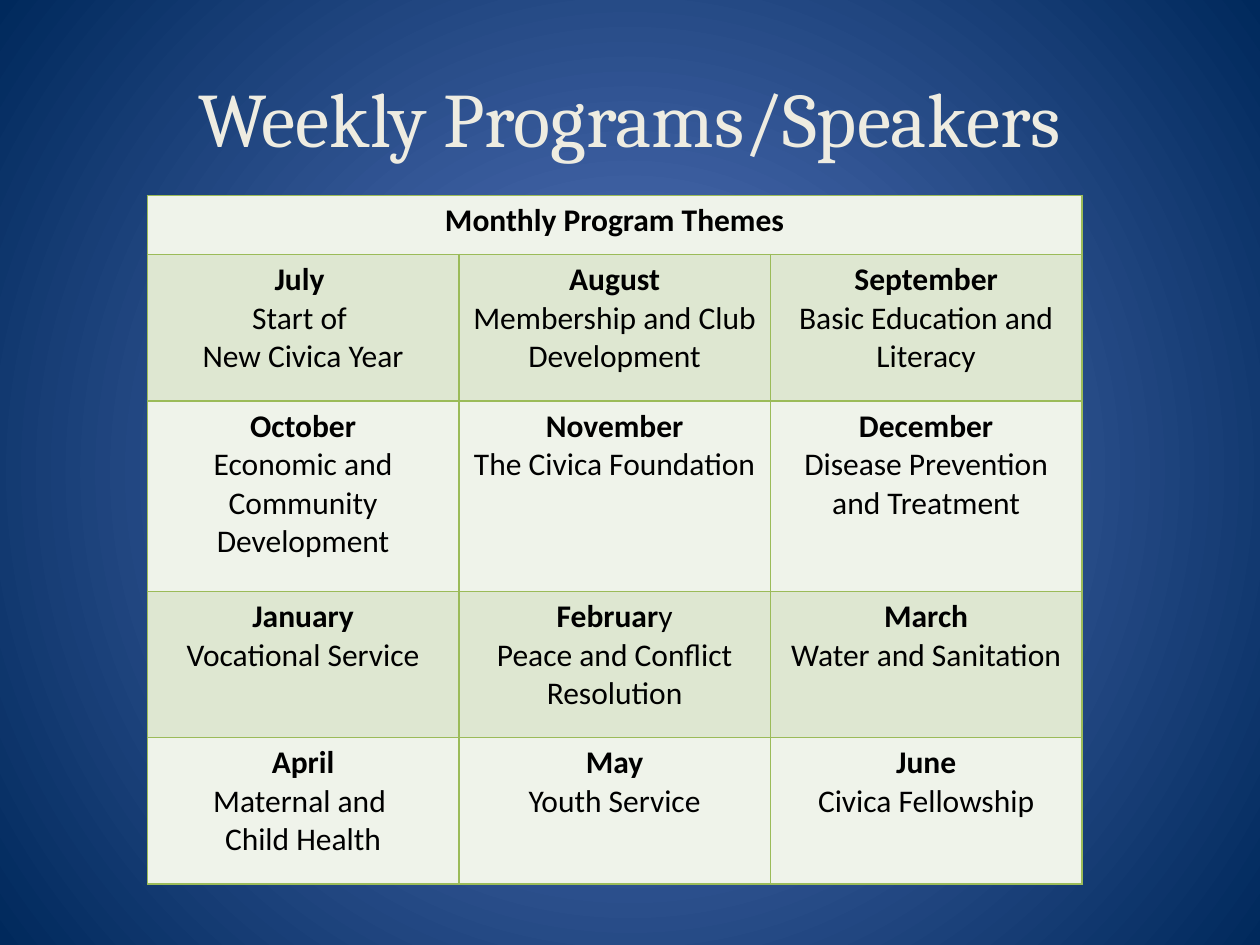
from dataclasses import dataclass

from lxml.etree import SubElement
from pptx import Presentation
from pptx.dml.color import RGBColor as RGB
from pptx.enum.text import MSO_ANCHOR as Anchor, PP_ALIGN as Align
from pptx.oxml.ns import qn
from pptx.util import Cm, Pt


@dataclass(frozen=True)
class Theme:
    glow: str = "5E7CC5"
    edge: str = "00295C"
    title: str = "EEECE1"
    ink: str = "000000"
    rule: str = "9BBB59"
    bands: tuple = ("EFF3EA", "DEE7D1")
    serif: str = "Cambria"
    sans: str = "Calibri"
    big: int = 44
    small: int = 18


@dataclass(frozen=True)
class Month:
    name: str
    lines: tuple
    tail: str = ""  # closing letters of the name in regular weight


THEME = Theme()
HEAD = Month("Monthly Program Themes", ())
YEAR = [
    Month("July ", ("Start of ", "New Civica Year")),
    Month("August", ("Membership and Club Development",)),
    Month("September", ("Basic Education and Literacy",)),
    Month("October", ("Economic and Community Development",)),
    Month("November", ("The Civica Foundation",)),
    Month("December", ("Disease Prevention and Treatment",)),
    Month("January", ("Vocational Service",)),
    Month("Februar", ("Peace and Conflict Resolution",), "y"),
    Month("March", ("Water and Sanitation",)),
    Month("April", ("Maternal and ", "Child Health")),
    Month("May", ("Youth Service",)),
    Month("June", ("Civica Fellowship",)),
]
COLS = 3
WIDTH = 6.28
ROWS = (1.19, 2.95, 3.84, 2.95, 2.95)


def style(run, face: str, size: int, color: str, bold: bool = False) -> None:
    font = run.font
    font.name, font.size, font.bold = face, Pt(size), bold
    font.color.rgb = RGB.from_string(color)


def paint(slide) -> None:
    """Fill the background with a round glow."""
    fill = slide.background.fill
    fill.gradient()
    for stop, color, at in zip(fill.gradient_stops, (THEME.glow, THEME.edge), (0, 1)):
        stop.color.rgb = RGB.from_string(color)
        stop.position = at
    grad = next(slide.element.iter(qn("a:gradFill")))
    grad.remove(grad.find(qn("a:lin")))
    path = SubElement(grad, qn("a:path"), {"path": "circle"})
    SubElement(path, qn("a:fillToRect"), {side: "50000" for side in "ltrb"})


def border(cell) -> None:
    """Rule all four sides; the lines come before the fill."""
    props = cell._tc.get_or_add_tcPr()
    for spot, side in enumerate("LRTB"):
        line = SubElement(props, qn(f"a:ln{side}"), {"w": str(Pt(1))})
        solid = SubElement(line, qn("a:solidFill"))
        SubElement(solid, qn("a:srgbClr"), {"val": THEME.rule})
        props.insert(spot, line)


def write(cell, month: Month) -> None:
    frame = cell.text_frame
    frame.text = "\n".join((month.name, *month.lines))
    if month.tail:
        frame.paragraphs[0].add_run().text = month.tail
    for row, para in enumerate(frame.paragraphs):
        para.alignment = Align.CENTER
        for spot, run in enumerate(para.runs):
            style(run, THEME.sans, THEME.small, THEME.ink, row == 0 and spot == 0)


def main() -> None:
    deck = Presentation()
    deck.slide_width, deck.slide_height = Cm(25.4), Cm(19.05)
    slide = deck.slides.add_slide(deck.slide_layouts[6])
    paint(slide)

    # Title
    box = slide.shapes.add_textbox(Cm(1.27), Cm(0.76), Cm(22.86), Cm(3.18))
    frame = box.text_frame
    frame.word_wrap = True
    frame.vertical_anchor = Anchor.MIDDLE
    frame.text = "Weekly Programs/Speakers"
    para = frame.paragraphs[0]
    para.alignment = Align.CENTER
    style(para.runs[0], THEME.serif, THEME.big, THEME.title)

    # Table grid
    table = slide.shapes.add_table(
        len(ROWS), COLS, Cm(2.97), Cm(3.94), Cm(COLS * WIDTH), Cm(sum(ROWS))
    ).table
    for col in table.columns:
        col.width = Cm(WIDTH)
    for row, (line, high) in enumerate(zip(table.rows, ROWS)):
        line.height = Cm(high)
        for cell in line.cells:
            cell.fill.solid()
            cell.fill.fore_color.rgb = RGB.from_string(THEME.bands[row % 2])
            border(cell)

    # Heading and months
    table.cell(0, 0).merge(table.cell(0, COLS - 1))
    write(table.cell(0, 0), HEAD)
    for spot, month in enumerate(YEAR):
        row, col = divmod(spot, COLS)
        write(table.cell(row + 1, col), month)

    deck.save("out.pptx")


if __name__ == "__main__":
    main()
